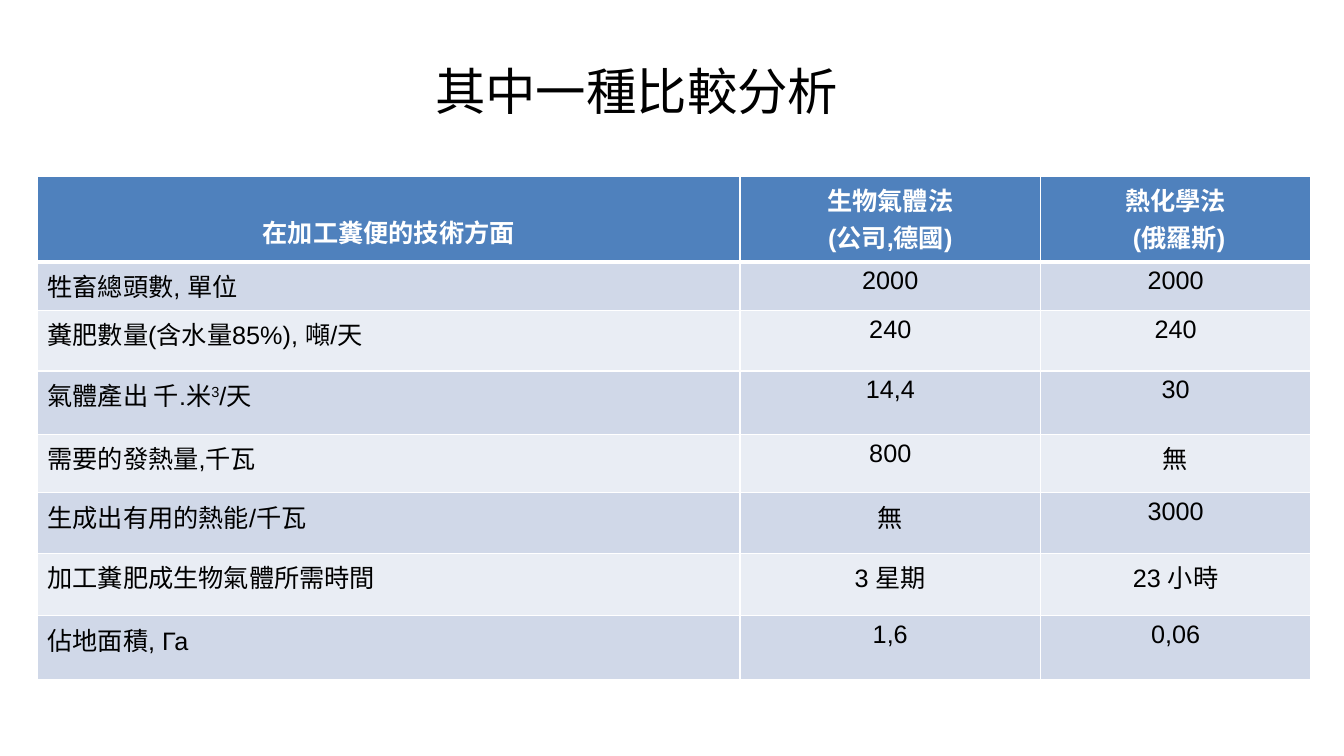
from lxml import etree
from pptx import Presentation
from pptx.dml.color import RGBColor
from pptx.enum.text import MSO_ANCHOR, PP_ALIGN
from pptx.oxml.ns import qn
from pptx.util import Inches, Pt

CENTER, LEFT = PP_ALIGN.CENTER, PP_ALIGN.LEFT
MIDDLE, BOTTOM = MSO_ANCHOR.MIDDLE, MSO_ANCHOR.BOTTOM

# Content: a cell is a string, with line breaks between its paragraphs
TITLE = "其中一種比較分析"
HEADER = ("在加工糞便的技術方面", "生物氣體法\n(公司,德國)", "熱化學法\n (俄羅斯)")
ROWS = [
    ("牲畜總頭數, 單位", "2000", "2000"),
    ("糞肥數量(含水量85%), 噸/天", "240", "240"),
    ("氣體產出 千.米^3^/天", "14,4", "30"),  # ^ marks a superscript
    ("需要的發熱量,千瓦", "800", "無"),
    ("生成出有用的熱能/千瓦", "無", "3000"),
    ("加工糞肥成生物氣體所需時間", "3 星期", "23 小時"),
    ("佔地面積, Га", "1,6", "0,06"),
]
COLUMN_WIDTHS = (6.97, 2.98, 2.68)
ROW_HEIGHTS = (0.85, 0.48, 0.6, 0.63, 0.58, 0.6, 0.62, 0.63)
HEADER_FILL, BAND_FILLS = "4F81BD", ("D0D8E8", "E9EDF4")
WHITE, BLACK = "FFFFFF", "000000"


def color(hex_text):
    return RGBColor.from_string(hex_text)


def write(paragraph, text, font_name, size, hex_text, bold=False, align=CENTER):
    paragraph.alignment = align
    for index, part in enumerate(text.split("^")):
        run = paragraph.add_run()
        run.text = part
        run.font.name = font_name
        run.font.size = Pt(size)
        run.font.bold = bold
        run.font.color.rgb = color(hex_text)
        if index % 2:
            run.font._element.set("baseline", "30000")


def set_borders(cell, widths):
    properties = cell._tc.get_or_add_tcPr()
    for position, (side, width) in enumerate(widths.items()):
        line = etree.Element(qn("a:ln" + side), w=str(Pt(width)))
        fill = etree.SubElement(line, qn("a:solidFill"))
        etree.SubElement(fill, qn("a:srgbClr"), val=WHITE)
        properties.insert(position, line)


presentation = Presentation()
presentation.slide_width, presentation.slide_height = Inches(13.33), Inches(7.5)
slide = presentation.slides.add_slide(presentation.slide_layouts[6])

# Title
title = slide.shapes.add_textbox(Inches(0), Inches(0.53), Inches(12.63), Inches(0.74))
title.text_frame.word_wrap = True
title.text_frame.vertical_anchor = MIDDLE
write(title.text_frame.paragraphs[0], TITLE, "Calibri", 36, BLACK)

# Comparison table
table = slide.shapes.add_table(
    len(ROW_HEIGHTS), len(COLUMN_WIDTHS), Inches(0.37), Inches(1.75),
    Inches(sum(COLUMN_WIDTHS)), Inches(sum(ROW_HEIGHTS))).table
for column, width in zip(table.columns, COLUMN_WIDTHS):
    column.width = Inches(width)
for row, height in zip(table.rows, ROW_HEIGHTS):
    row.height = Inches(height)

for r, texts in enumerate([HEADER] + ROWS):
    is_header = r == 0
    for c, text in enumerate(texts):
        cell = table.cell(r, c)
        cell.fill.solid()
        cell.fill.fore_color.rgb = color(HEADER_FILL if is_header else BAND_FILLS[(r - 1) % 2])
        set_borders(cell, {"L": 1, "R": 1, "T": 3 if r == 1 else 1, "B": 3 if is_header else 1})
        for index, line in enumerate(text.split("\n")):
            frame = cell.text_frame
            paragraph = frame.add_paragraph() if index else frame.paragraphs[0]
            write(paragraph, line, "Arial", 18, WHITE if is_header else BLACK,
                  bold=is_header, align=CENTER if is_header or c else LEFT)

# The one-line heading sits low in the header row
heading = table.cell(0, 0)
heading.vertical_anchor = BOTTOM
heading.margin_bottom = Inches(0.12)

presentation.save("out.pptx")
